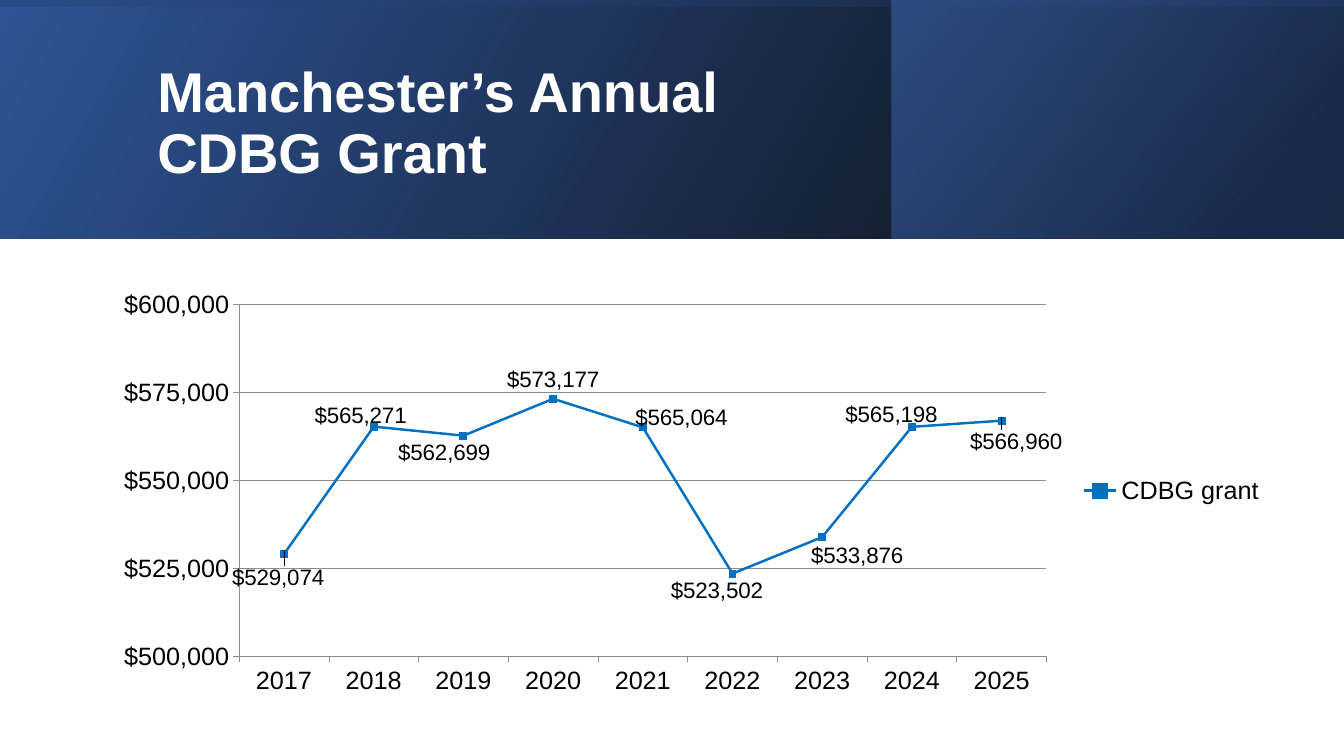
"""Build the slide on the annual grant with a banner, a title and a line chart."""
from pptx import Presentation
from pptx.chart.data import CategoryChartData
from pptx.dml.color import RGBColor
from pptx.enum.chart import XL_CHART_TYPE, XL_LABEL_POSITION, XL_LEGEND_POSITION, XL_MARKER_STYLE, XL_TICK_MARK
from pptx.enum.shapes import MSO_SHAPE
from pptx.enum.text import MSO_ANCHOR, MSO_AUTO_SIZE, PP_ALIGN
from pptx.oxml import parse_xml
from pptx.oxml.ns import nsdecls
from pptx.util import Inches, Pt

RECT = MSO_SHAPE.RECTANGLE
LINE = XL_CHART_TYPE.LINE_MARKERS
ABOVE = XL_LABEL_POSITION.ABOVE
RIGHT = XL_LEGEND_POSITION.RIGHT
SQUARE = XL_MARKER_STYLE.SQUARE
OUT = XL_TICK_MARK.OUTSIDE
MIDDLE = MSO_ANCHOR.MIDDLE
LEFT = PP_ALIGN.LEFT
FIXED = MSO_AUTO_SIZE.NONE

WIDE, HIGH, BAND = 13.33, 7.5, 2.37
FONT = "Arial"
HUES = {"white": "FFFFFF", "black": "000000", "grid": "8C8C8C", "line": "0070C0",
        "royal": "2F5597", "navy": "203864", "sky": "4472C4"}
TITLE = ["Manchester’s Annual ", "CDBG Grant"]
NAME = "CDBG grant"
GRANTS = {"2017": 529074, "2018": 565271, "2019": 562699, "2020": 573177, "2021": 565064,
          "2022": 523502, "2023": 533876, "2024": 565198, "2025": 566960}
SHIFTS = {"2017": (-0.5, 10.6), "2018": (-1.1, 2), "2019": (-1.6, 8.9), "2021": (3.2, 2.5),
          "2022": (-1.3, 9.1), "2023": (2.9, 9.4), "2024": (-1.7, 1.7), "2025": (1.2, 10.1)}
MONEY = '"$"#,##0'
PLOT = {"x": 0.14, "y": 0.04, "w": 0.67, "h": 0.87}
MID = (WIDE - BAND) / 2
PANELS = [
    ((0, 0, WIDE, BAND), 0, 330, [(0, "black", 96), (100, "royal", 100)]),
    ((8.84, 0, WIDE - 8.84, BAND), 0, 320, [(19, "navy", 68), (100, "sky", 48)]),
    ((MID, -MID, BAND, WIDE), 270, 350, [(23, "royal", 16), (99, "black", 45)]),
]


def hue(key):
    return RGBColor.from_string(HUES[key])


def style(font, size, key="black"):
    font.name, font.size = FONT, Pt(size)
    font.color.rgb = hue(key)


def stroke(line, key, width):
    line.color.rgb = hue(key)
    line.width = Pt(width)


def layout(parts, inner=False):
    tags = '<c:layoutTarget val="inner"/>' if inner else ""
    if inner:
        tags += '<c:xMode val="edge"/><c:yMode val="edge"/>'
    tags += "".join(f'<c:{key} val="{val:.3f}"/>' for key, val in parts.items())
    return parse_xml(f'<c:layout {nsdecls("c")}><c:manualLayout>{tags}</c:manualLayout></c:layout>')


def add_panel(slide, box, turn, angle, stops):
    panel = slide.shapes.add_shape(RECT, *map(Inches, box))
    panel.rotation = turn
    panel.shadow.inherit = False
    panel.line.fill.background()
    props = panel._element.spPr
    props.xfrm.set("flipH", "1")
    tags = "".join(
        f'<a:gs pos="{pos * 1000}"><a:srgbClr val="{HUES[key]}">'
        f'<a:alpha val="{alpha * 1000}"/></a:srgbClr></a:gs>' for pos, key, alpha in stops)
    props.prstGeom.addnext(parse_xml(
        f'<a:gradFill {nsdecls("a")} rotWithShape="1"><a:gsLst>{tags}</a:gsLst>'
        f'<a:lin ang="{angle * 60000}" scaled="0"/></a:gradFill>'))


def add_title(slide):
    title = slide.shapes.title
    slide.shapes._spTree.append(title._element)
    title.left, title.top, title.width, title.height = map(Inches, (1.51, 0.38, 10.63, 1.72))
    frame = title.text_frame
    frame.auto_size, frame.word_wrap, frame.vertical_anchor = FIXED, True, MIDDLE
    frame.margin_left = frame.margin_right = Inches(0.05)
    frame.margin_top = frame.margin_bottom = Inches(0.05)
    para = frame.paragraphs[0]
    para.alignment, para.line_spacing = LEFT, 0.9
    for row, text in enumerate(TITLE):
        if row:
            para.add_line_break()
        run = para.add_run()
        run.text = text
        run.font.bold = True
        style(run.font, 40, "white")


def add_graph(slide):
    data = CategoryChartData(number_format=MONEY)
    data.categories = list(GRANTS)
    data.add_series(NAME, list(GRANTS.values()))
    box = map(Inches, (0.7, 2.86, 11.95, 4.03))
    chart = slide.shapes.add_chart(LINE, *box, data).chart
    style(chart.font, 18)
    chart.has_title = False
    chart.has_legend = True
    chart.legend.position, chart.legend.include_in_layout = RIGHT, False
    style(chart.legend.font, 18)
    for axis in (chart.category_axis, chart.value_axis):
        axis.major_tick_mark = OUT
        style(axis.tick_labels.font, 18)
        stroke(axis.format.line, "grid", 0.5)
    axis = chart.value_axis
    axis.minimum_scale, axis.maximum_scale, axis.major_unit = 500000, 600000, 25000
    axis.tick_labels.number_format = MONEY
    axis.tick_labels.number_format_is_linked = False
    stroke(axis.major_gridlines.format.line, "grid", 0.5)

    area = chart._chartSpace.chart.plotArea
    for old in area.xpath("c:layout"):
        area.remove(old)
    area.insert(0, layout(PLOT, inner=True))

    plot = chart.plots[0]
    plot.vary_by_categories = False
    series = plot.series[0]
    series.smooth = False
    stroke(series.format.line, "line", 1.75)
    mark = series.marker
    mark.style, mark.size = SQUARE, 5
    mark.format.fill.solid()
    mark.format.fill.fore_color.rgb = hue("line")
    stroke(mark.format.line, "line", 0.75)
    tags = series.data_labels
    tags.show_value, tags.position = True, ABOVE
    tags.number_format, tags.number_format_is_linked = MONEY, False
    style(tags.font, 16)
    for spot, year in enumerate(GRANTS):
        if year in SHIFTS:
            label = series.points[spot].data_label
            style(label.font, 16)
            label.position = ABOVE
            across, down = SHIFTS[year]
            index = series._element.xpath(f'c:dLbls/c:dLbl/c:idx[@val="{spot}"]')[0]
            index.addnext(layout({"x": across / 100, "y": down / 100}))


def main():
    deck = Presentation()
    deck.slide_width, deck.slide_height = Inches(WIDE), Inches(HIGH)
    slide = deck.slides.add_slide(deck.slide_layouts[5])
    for panel in PANELS:
        add_panel(slide, *panel)
    add_title(slide)
    add_graph(slide)
    deck.save("out.pptx")


if __name__ == "__main__":
    main()
